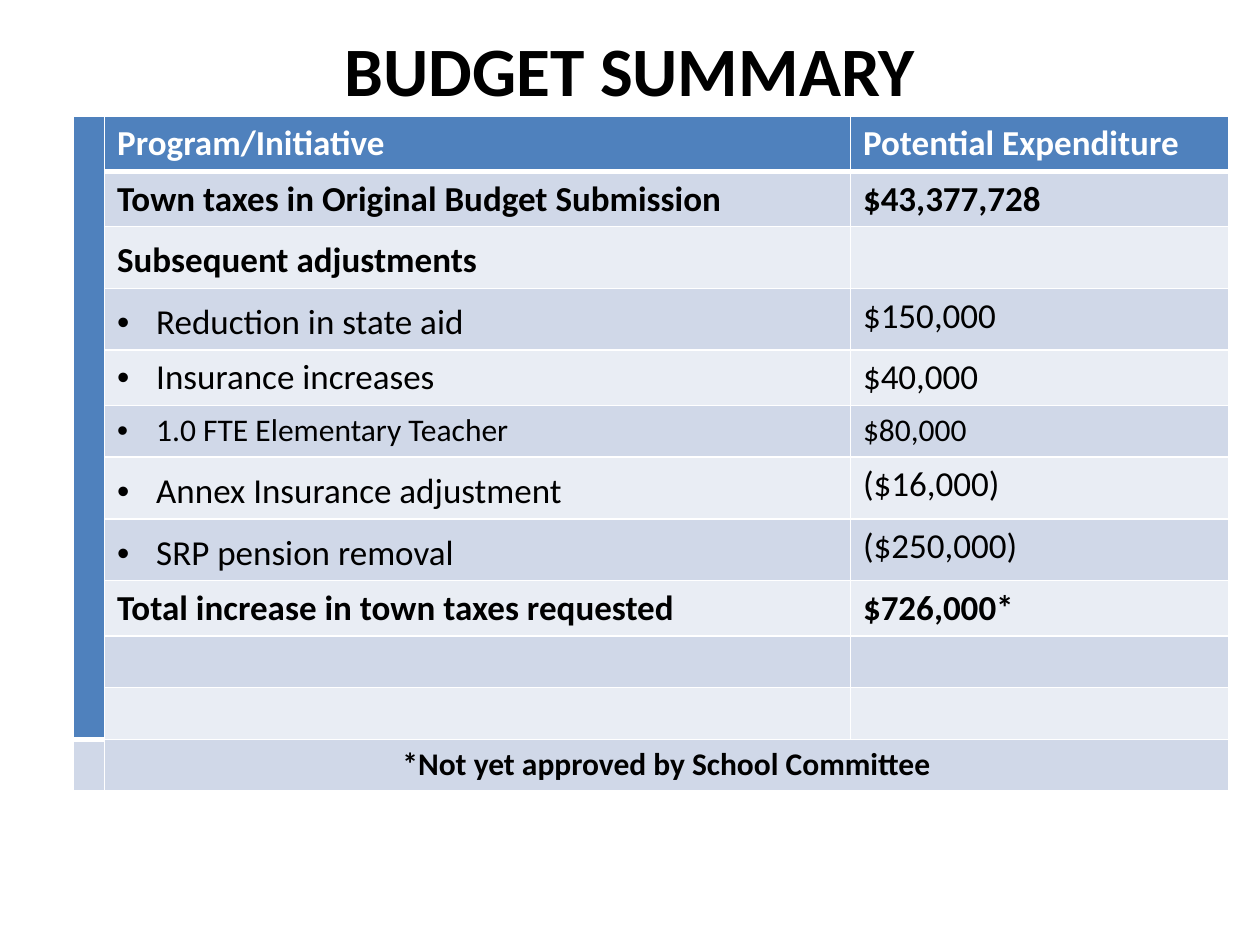
from lxml.etree import SubElement
from pptx import Presentation
from pptx.dml.color import RGBColor
from pptx.enum.text import MSO_ANCHOR, PP_ALIGN
from pptx.oxml.ns import qn
from pptx.util import Inches, Pt

BLACK = RGBColor(0x00, 0x00, 0x00)
WHITE = RGBColor(0xFF, 0xFF, 0xFF)
BLUE = RGBColor(0x4F, 0x81, 0xBD)
BAND_DARK = RGBColor(0xD0, 0xD8, 0xE8)
BAND_LIGHT = RGBColor(0xE9, 0xED, 0xF4)
FONT = "Calibri"

# Program, expenditure, row height, font size, bold, bulleted, loose spacing
ROWS = [
    ("Program/Initiative", "Potential Expenditure", 0.44, 20, True, False, False),
    ("Town taxes in Original Budget Submission", "$43,377,728", 0.44, 20, True, False, False),
    ("Subsequent adjustments", "", 0.49, 20, True, False, True),
    ("Reduction in state aid", "$150,000", 0.49, 20, False, True, True),
    ("Insurance increases", "$40,000", 0.44, 20, False, True, False),
    ("1.0 FTE Elementary Teacher", "$80,000", 0.41, 18, False, True, False),
    ("Annex Insurance adjustment", "($16,000)", 0.49, 20, False, True, True),
    ("SRP pension removal", "($250,000)", 0.49, 20, False, True, True),
    ("Total increase in town taxes requested", "$726,000*", 0.44, 20, True, False, False),
    ("", "", 0.41, 18, False, False, False),
    ("", "", 0.41, 18, False, False, False),
    ("*Not yet approved by School Committee", "", 0.41, 18, True, False, False),
]
COL_WIDTHS = [0.25, 5.92, 3]
LAST = len(ROWS) - 1


def write(p, text, size, bold, color):
    p.text = text
    for r in p.runs:
        r.font.name = FONT
        r.font.size = Pt(size)
        r.font.bold = bold
        r.font.color.rgb = color


def set_borders(cell, top, bottom):
    """White borders, 1 pt at the sides and the given points above and below."""
    tcPr = cell._tc.get_or_add_tcPr()
    for side, width in (("L", 1), ("R", 1), ("T", top), ("B", bottom)):
        ln = SubElement(tcPr, qn(f"a:ln{side}"), w=str(Pt(width)))
        fill = SubElement(ln, qn("a:solidFill"))
        SubElement(fill, qn("a:srgbClr"), val=str(WHITE))


prs = Presentation()
prs.slide_width, prs.slide_height = Inches(10), Inches(7.5)
s = prs.slides.add_slide(prs.slide_layouts[6])

title = s.shapes.add_textbox(Inches(0.5), Inches(0.17), Inches(9), Inches(0.75))
tf = title.text_frame
tf.word_wrap = True
tf.vertical_anchor = MSO_ANCHOR.MIDDLE
write(tf.paragraphs[0], "BUDGET SUMMARY", 39.6, True, BLACK)
tf.paragraphs[0].alignment = PP_ALIGN.CENTER

table = s.shapes.add_table(
    len(ROWS), len(COL_WIDTHS), Inches(0.58), Inches(0.92),
    Inches(sum(COL_WIDTHS)), Inches(sum(row[2] for row in ROWS))).table
table.horz_banding = False
for col, width in zip(table.columns, COL_WIDTHS):
    col.width = Inches(width)

for i, (program, amount, height, size, bold, bulleted, loose) in enumerate(ROWS):
    table.rows[i].height = Inches(height)
    band = BAND_DARK if i % 2 else BAND_LIGHT
    for j, text in enumerate(("", program, amount)):
        cell = table.cell(i, j)
        # The blue header row and side column end in a thick line
        header_end = LAST - 1 if j == 0 else 0
        set_borders(cell, 3 if i == header_end + 1 else 1,
                    3 if i in (0, header_end) else 1)
        cell.fill.solid()
        cell.fill.fore_color.rgb = BLUE if i <= header_end else band
        if text:
            write(cell.text_frame.paragraphs[0], text, size, bold,
                  BLACK if i else WHITE)

    p = table.cell(i, 1).text_frame.paragraphs[0]
    if loose:
        p.line_spacing = 1.15
        p.space_after = Pt(10)
    if bulleted:
        pPr = p._p.get_or_add_pPr()
        pPr.set("marL", str(Inches(0.31)))
        pPr.set("indent", str(-Inches(0.31)))
        SubElement(pPr, qn("a:buFont"), typeface="Arial")
        SubElement(pPr, qn("a:buChar"), char="•")

table.cell(0, 0).merge(table.cell(LAST - 1, 0))
footnote = table.cell(LAST, 1)
footnote.merge(table.cell(LAST, 2))
footnote.text_frame.paragraphs[0].alignment = PP_ALIGN.CENTER

prs.save("out.pptx")
